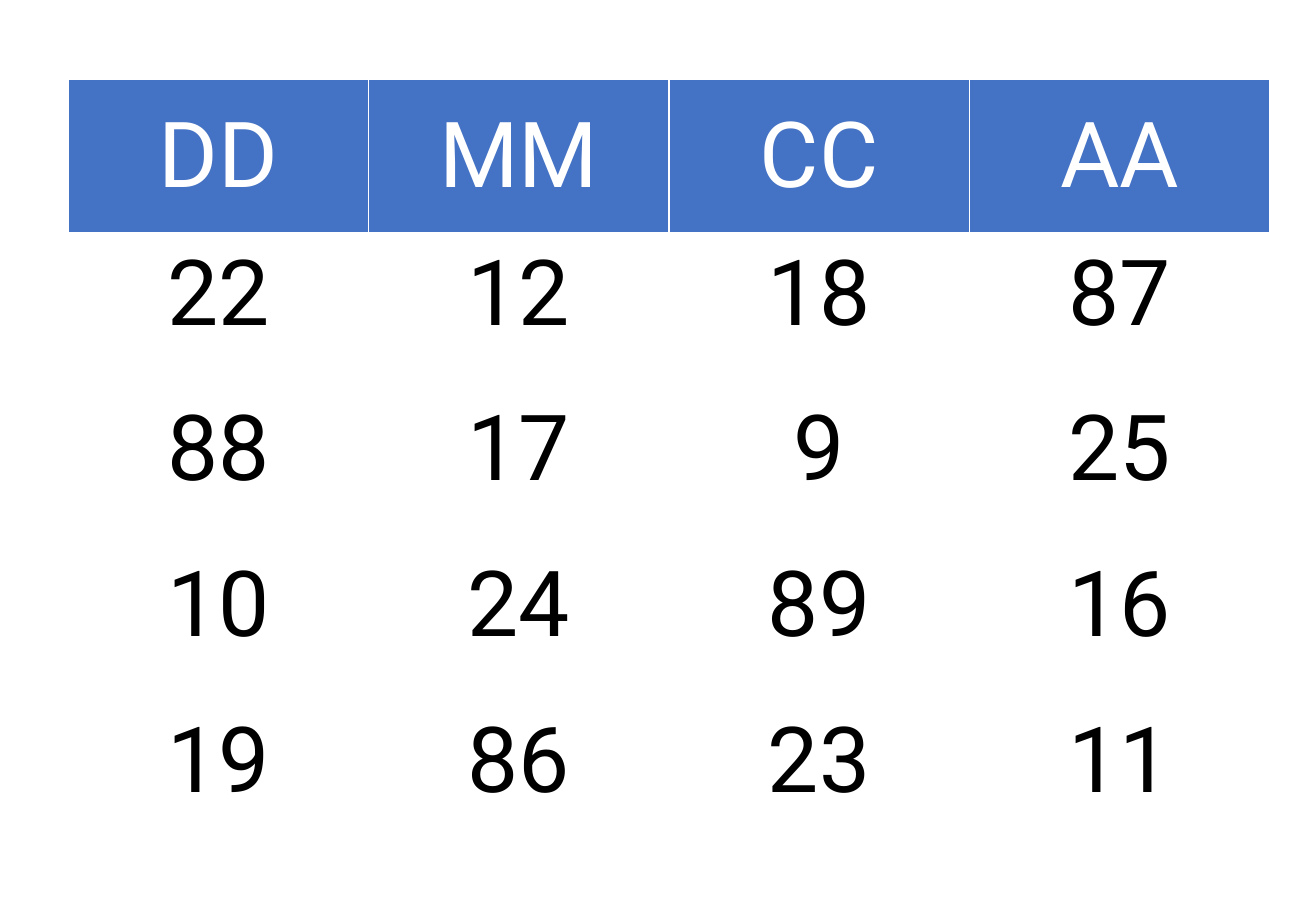
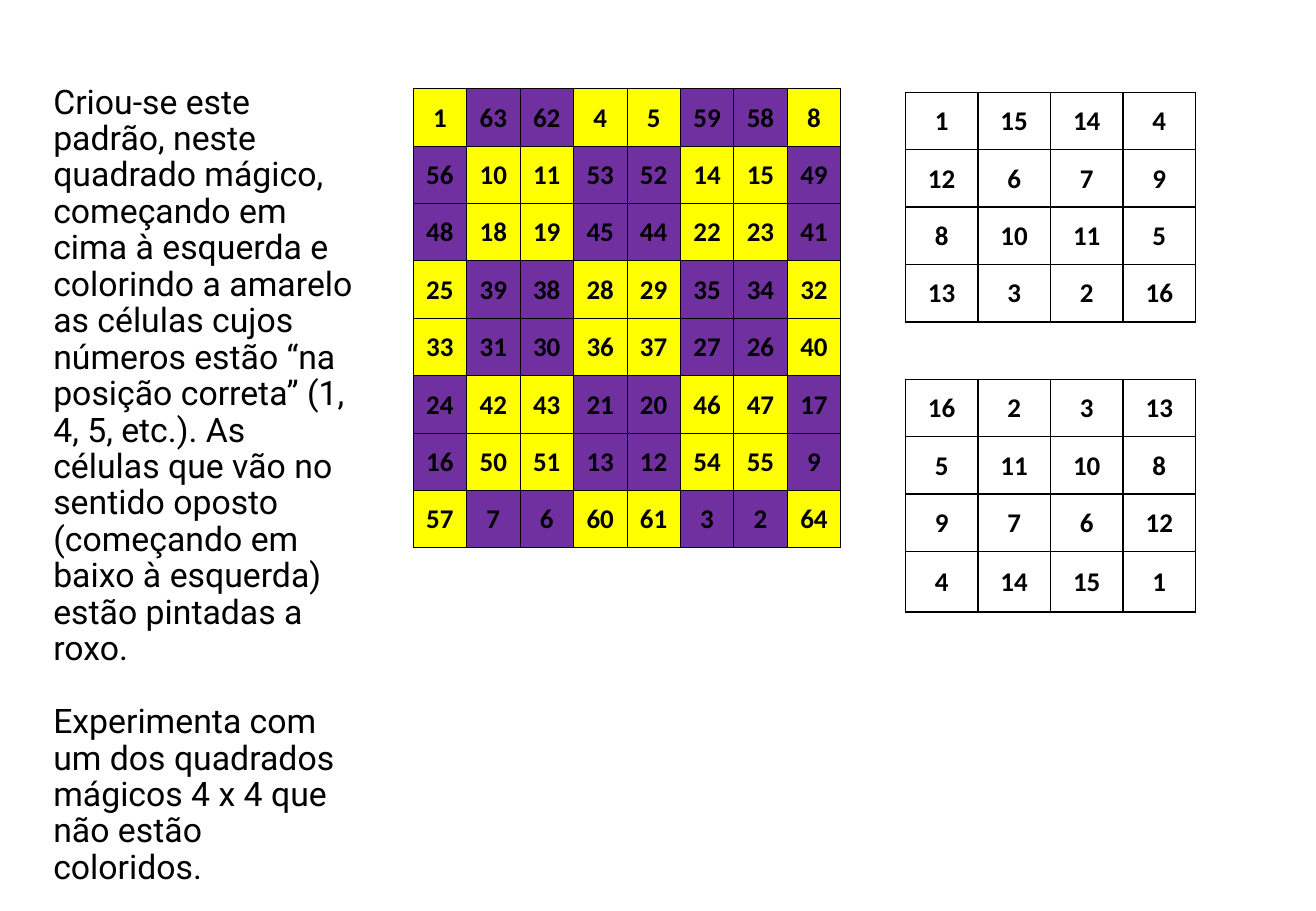
from dataclasses import dataclass
from typing import Optional

from lxml.etree import SubElement
from pptx import Presentation
from pptx.dml.color import RGBColor
from pptx.enum.text import MSO_ANCHOR as Anchor, PP_ALIGN as Align
from pptx.oxml.ns import qn
from pptx.slide import Slide
from pptx.table import _Cell as Cell
from pptx.text.text import TextFrame
from pptx.util import Inches, Pt

COLORS = {"black": "000000", "white": "FFFFFF", "blue": "4472C4",
          "yellow": "FFFF00", "purple": "7030A0"}
PLAIN_STYLE = "{2D5ABB26-0587-4C30-8999-92F81FD0307C}"  # no style, no grid
EXPLANATION = [
    "Criou-se este padrão, neste quadrado mágico, começando em cima à esquerda "
    "e colorindo a amarelo as células cujos números estão “na posição correta” "
    "(1, 4, 5, etc.). As células que vão no sentido oposto (começando em baixo "
    "à esquerda) estão pintadas a roxo.",
    "Experimenta com um dos quadrados mágicos 4 x 4 que não estão coloridos.",
]
DATE_SQUARE = [
    ["DD", "MM", "CC", "AA"],
    [22, 12, 18, 87],
    [88, 17, 9, 25],
    [10, 24, 89, 16],
    [19, 86, 23, 11],
]


@dataclass(frozen=True)
class CellStyle:
    font: str
    size: float
    color: str = "black"
    bold: bool = False
    fill: Optional[str] = None
    anchor: Anchor = Anchor.MIDDLE
    margins: tuple[float, float, float, float] = (0.01, 0.01, 0.01, 0)
    line: str = "black"
    line_width: float = 1
    bottom_width: Optional[float] = None


@dataclass(frozen=True)
class Grid:
    left: float
    top: float
    width: float
    row_heights: list[float]
    values: list[list]
    styles: list[list[CellStyle]]


HEADER = CellStyle("Roboto", 54, "white", fill="blue", line="white",
                   margins=(0.08, 0.05, 0.08, 0.05), bottom_width=3)
DATE = CellStyle("Roboto", 54, anchor=Anchor.TOP, line="white",
                 margins=(0.08, 0.05, 0.08, 0.05))
NUMBER = CellStyle("Calibri", 16, bold=True)
IN_PLACE = CellStyle("Calibri", 16, bold=True, fill="yellow", line_width=0.5)
REVERSED = CellStyle("Calibri", 16, bold=True, fill="purple", line_width=0.5)


def write(frame: TextFrame, *paragraphs: str, font: str, size: float,
          color: str = "black", bold: bool = False, align: Align = Align.LEFT,
          line_spacing: float = 1, gap: float = 0) -> None:
    """Fill a frame, with gap points between its paragraphs."""
    for index, text in enumerate(paragraphs):
        paragraph = frame.add_paragraph() if index else frame.paragraphs[0]
        paragraph.alignment = align
        paragraph.line_spacing = line_spacing
        paragraph.space_before = Pt(gap if index else 0)
        run = paragraph.add_run()
        run.text = text
        run.font.name, run.font.size, run.font.bold = font, Pt(size), bold
        run.font.color.rgb = RGBColor.from_string(COLORS[color])


def set_border(cell: Cell, side: str, color: str, width: float) -> None:
    line = SubElement(cell._tc.get_or_add_tcPr(), qn(f"a:ln{side}"), w=str(Pt(width)))
    SubElement(SubElement(line, qn("a:solidFill")), qn("a:srgbClr"), val=COLORS[color])


def format_cell(cell: Cell, value: object, style: CellStyle) -> None:
    """Format a cell; one without a value keeps only its top and bottom lines."""
    for side in "TB" if value is None else "LRTB":
        thick = style.bottom_width if side == "B" else None
        set_border(cell, side, style.line, thick or style.line_width)
    if style.fill:
        cell.fill.solid()
        cell.fill.fore_color.rgb = RGBColor.from_string(COLORS[style.fill])
    else:
        cell.fill.background()
    if value is None:
        return
    cell.vertical_anchor = style.anchor
    (cell.margin_left, cell.margin_top,
     cell.margin_right, cell.margin_bottom) = map(Inches, style.margins)
    write(cell.text_frame, str(value), font=style.font, size=style.size,
          color=style.color, bold=style.bold, align=Align.CENTER)


def draw_grid(slide: Slide, grid: Grid) -> None:
    columns = len(grid.values[0])
    frame = slide.shapes.add_table(
        len(grid.values), columns, Inches(grid.left), Inches(grid.top),
        Inches(grid.width), Inches(sum(grid.row_heights)))
    frame._element.xpath(".//a:tableStyleId")[0].text = PLAIN_STYLE
    table = frame.table
    table.first_row = table.horz_banding = False
    for column in table.columns:
        column.width = Inches(grid.width / columns)
    for r, height in enumerate(grid.row_heights):
        table.rows[r].height = Inches(height)
        for c, value in enumerate(grid.values[r]):
            format_cell(table.cell(r, c), value, grid.styles[r][c])


def on_diagonal(row: int, column: int) -> bool:
    """Tell whether a cell is on a diagonal of its 4 x 4 block."""
    return row % 4 == column % 4 or row % 4 + column % 4 == 3


def magic_square(order: int) -> list[list[int]]:
    """Count forwards on the block diagonals and backwards elsewhere."""
    last = order * order
    return [[r * order + c + 1 if on_diagonal(r, c) else last - r * order - c
             for c in range(order)] for r in range(order)]


def add_date_slide(slide: Slide) -> None:
    styles = [[HEADER] * 4] + [[DATE] * 4] * 4
    draw_grid(slide, Grid(0.56, 0.65, 9.89, [6.41 / 5] * 5, DATE_SQUARE, styles))


def add_pattern_slide(slide: Slide) -> None:
    explanation = slide.shapes.add_textbox(
        Inches(0.34), Inches(0.65), Inches(2.69), Inches(6.39)).text_frame
    explanation.word_wrap = True
    write(explanation, *EXPLANATION, font="Roboto", size=20, line_spacing=0.9, gap=21.6)

    row_height = 3.78 / 8
    pattern = [[IN_PLACE if on_diagonal(r, c) else REVERSED for c in range(8)]
               for r in range(8)]
    draw_grid(slide, Grid(3.4, 0.73, 3.52, [row_height] * 8, magic_square(8), pattern))

    small = magic_square(4)
    mirrored = [[17 - number for number in row] for row in small]
    draw_grid(slide, Grid(7.45, 0.76, 2.39, [row_height] * 8 + [0.5],
                          small + [[None] * 4] + mirrored, [[NUMBER] * 4] * 9))


def main() -> None:
    deck = Presentation()
    deck.slide_width, deck.slide_height = Inches(10.83), Inches(7.5)
    for fill_slide in (add_date_slide, add_pattern_slide):
        fill_slide(deck.slides.add_slide(deck.slide_layouts[6]))
    deck.save("out.pptx")


if __name__ == "__main__":
    main()
